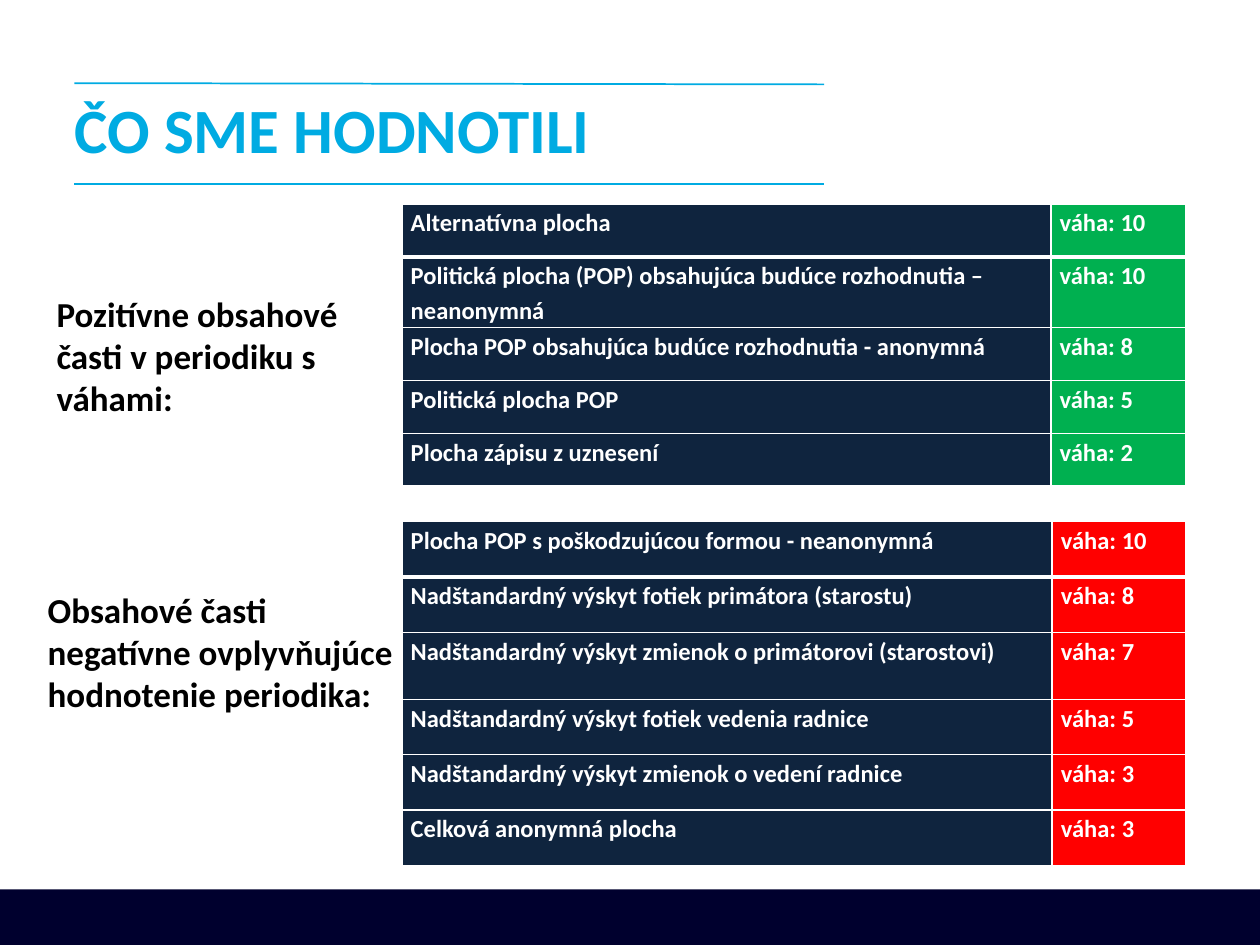
from lxml import etree
from pptx import Presentation
from pptx.dml.color import RGBColor
from pptx.enum.shapes import MSO_CONNECTOR, MSO_SHAPE
from pptx.enum.text import MSO_ANCHOR, MSO_AUTO_SIZE, PP_ALIGN
from pptx.oxml.ns import qn
from pptx.util import Inches, Pt

STRAIGHT = MSO_CONNECTOR.STRAIGHT
RECTANGLE = MSO_SHAPE.RECTANGLE
TOP, MIDDLE = MSO_ANCHOR.TOP, MSO_ANCHOR.MIDDLE
LEFT = PP_ALIGN.LEFT
GROW = MSO_AUTO_SIZE.SHAPE_TO_FIT_TEXT

WIDTH, HEIGHT = 10, 7.5
MARGIN = 0.59
TABLE_LEFT, TABLE_WIDTH = 3.19, 6.22
FONT = "Calibri"
SKY, NAVY, BAND = "00ABE2", "0F243E", "00002E"
GREEN, RED, WHITE, BLACK = "00B050", "FF0000", "FFFFFF", "000000"

POSITIVE = [
    ("Alternatívna plocha", 10),
    ("Politická plocha (POP) obsahujúca budúce rozhodnutia – neanonymná", 10),
    ("Plocha POP obsahujúca budúce rozhodnutia - anonymná", 8),
    ("Politická plocha POP", 5),
    ("Plocha zápisu z uznesení", 2),
]
NEGATIVE = [
    ("Plocha POP s poškodzujúcou formou - neanonymná", 10),
    ("Nadštandardný výskyt fotiek primátora (starostu)", 8),
    ("Nadštandardný výskyt zmienok o primátorovi (starostovi)", 7),
    ("Nadštandardný výskyt fotiek vedenia radnice", 5),
    ("Nadštandardný výskyt zmienok o vedení radnice", 3),
    ("Celková anonymná plocha", 3),
]


def color(value):
    return RGBColor.from_string(value)


def write(text_frame, text, size, text_color, spacing=1.0):
    text_frame.text = text
    paragraph = text_frame.paragraphs[0]
    paragraph.alignment = LEFT
    paragraph.line_spacing = spacing
    font = paragraph.runs[0].font
    font.name, font.size, font.bold = FONT, Pt(size), True
    font.color.rgb = color(text_color)


def add_band(slide, top):
    band = slide.shapes.add_shape(
        RECTANGLE, 0, Inches(top), Inches(WIDTH), Inches(HEIGHT - top))
    band.shadow.inherit = False
    band.fill.solid()
    band.fill.fore_color.rgb = color(BAND)
    band.line.fill.background()


def add_rule(slide, start, end):
    rule = slide.shapes.add_connector(
        STRAIGHT, Inches(MARGIN), Inches(start), Inches(6.54), Inches(end))
    rule.line.color.rgb = color(SKY)
    rule.line.width = Pt(1)
    etree.SubElement(rule._element.spPr, qn("a:effectLst"))


def set_title(slide, text):
    title = slide.shapes.title
    title.left, title.top = Inches(MARGIN), Inches(0.62)
    title.width, title.height = Inches(6.93), Inches(0.87)
    frame = title.text_frame
    frame.margin_left = frame.margin_right = 0
    frame.margin_top = frame.margin_bottom = 0
    frame.vertical_anchor = MIDDLE
    write(frame, text, 36, SKY, 0.9)


def add_label(slide, left, top, height, text, anchor):
    label = slide.shapes.add_textbox(
        Inches(left), Inches(top), Inches(2.99), Inches(height))
    frame = label.text_frame
    frame.word_wrap = True
    frame.auto_size = GROW
    frame.vertical_anchor = anchor
    write(frame, text, 20, BLACK)


def set_borders(cell, widths):
    properties = cell._tc.get_or_add_tcPr()
    for side, width in widths.items():
        line = etree.SubElement(properties, qn(f"a:ln{side}"), w=str(Pt(width)))
        fill = etree.SubElement(line, qn("a:solidFill"))
        etree.SubElement(fill, qn("a:srgbClr"), val=WHITE)


def fill_cell(cell, text, fill_color, top_width, bottom_width):
    # Borders come before the fill in the cell properties
    set_borders(cell, {"L": 1, "R": 1, "T": top_width, "B": bottom_width})
    cell.fill.solid()
    cell.fill.fore_color.rgb = color(fill_color)
    cell.margin_left = cell.margin_right = Inches(0.07)
    cell.margin_top = cell.margin_bottom = 0
    write(cell.text_frame, text, 14, WHITE, 1.15)


def add_weights(slide, top, rows, heights, weight_width, weight_color):
    frame = slide.shapes.add_table(
        len(rows), 2, Inches(TABLE_LEFT), Inches(top),
        Inches(TABLE_WIDTH), Inches(sum(heights)))
    table = frame.table
    table.columns[0].width = Inches(TABLE_WIDTH - weight_width)
    table.columns[1].width = Inches(weight_width)
    for index, (part, weight) in enumerate(rows):
        table.rows[index].height = Inches(heights[index])
        top_width = 3 if index == 1 else 1
        bottom_width = 3 if index == 0 else 1
        fill_cell(table.cell(index, 0), part, NAVY, top_width, bottom_width)
        fill_cell(table.cell(index, 1), f"váha: {weight}", weight_color,
                  top_width, bottom_width)


def main():
    presentation = Presentation()
    presentation.slide_width = Inches(WIDTH)
    presentation.slide_height = Inches(HEIGHT)
    slide = presentation.slides.add_slide(presentation.slide_layouts[5])

    # Footer band and heading between two rules
    add_band(slide, 7.06)
    add_rule(slide, 0.66, 0.67)
    add_rule(slide, 1.46, 1.46)
    set_title(slide, "ČO SME HODNOTILI")

    # Weight tables; one row in each is taller
    add_weights(slide, 1.62, POSITIVE, [0.42, 0.56] + [0.42] * 3, 1.07, GREEN)
    add_weights(slide, 4.14, NEGATIVE, [0.44] * 2 + [0.53] + [0.44] * 3, 1.06, RED)

    # Labels beside the tables
    add_label(slide, 0.35, 2.25, 1.14,
              "Pozitívne obsahové časti v periodiku s váhami:", MIDDLE)
    add_label(slide, 0.28, 4.62, 1.11,
              "Obsahové časti negatívne ovplyvňujúce hodnotenie periodika:", TOP)

    presentation.save("out.pptx")


if __name__ == "__main__":
    main()
